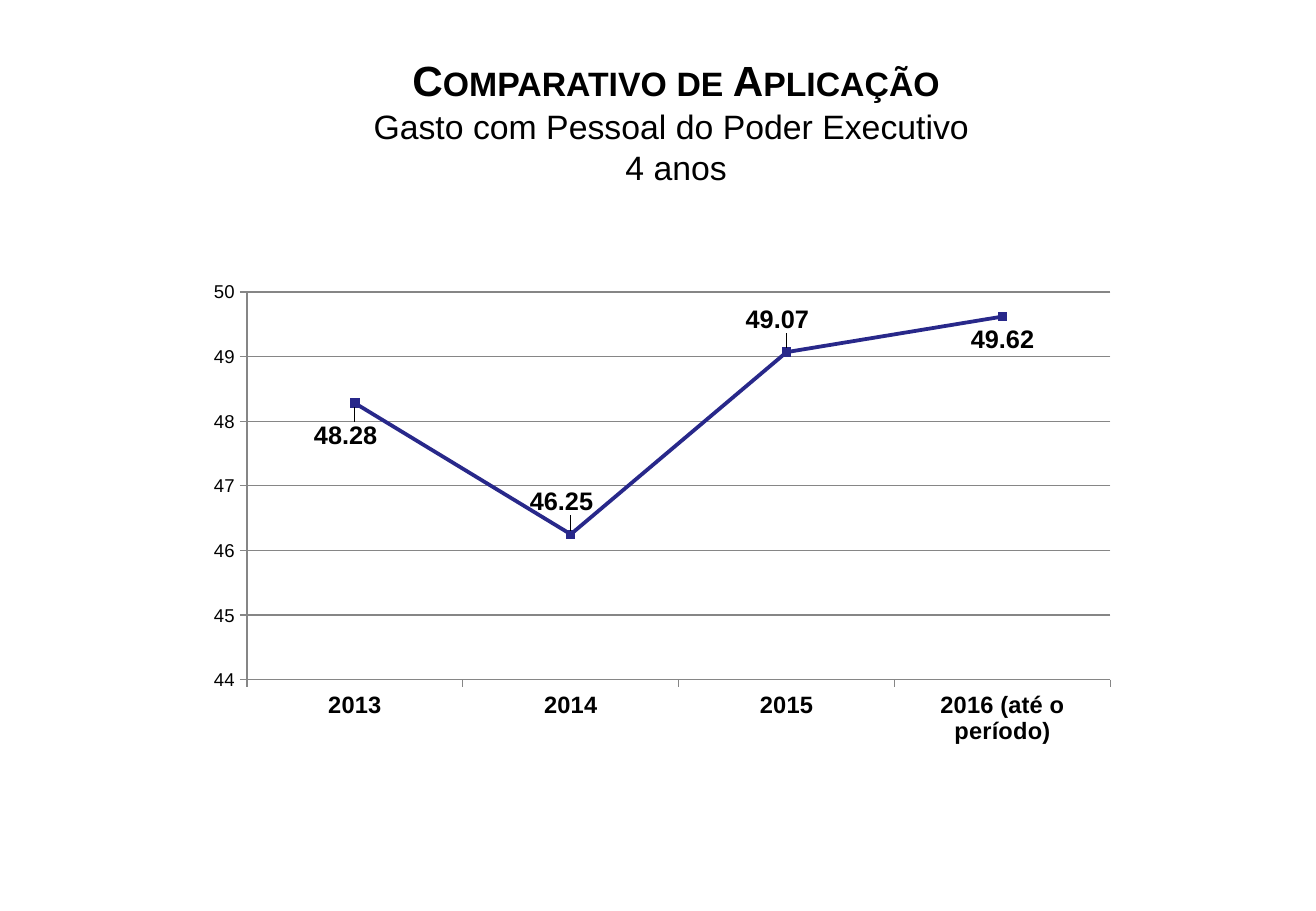
"""Build a slide with a line chart of personnel spending over four years."""
from dataclasses import dataclass

from lxml import etree
from pptx import Presentation
from pptx.chart.data import CategoryChartData
from pptx.dml.color import RGBColor
from pptx.enum.chart import XL_CHART_TYPE, XL_LABEL_POSITION, XL_MARKER_STYLE, XL_TICK_MARK
from pptx.enum.text import MSO_ANCHOR, PP_ALIGN
from pptx.oxml.ns import qn
from pptx.util import Inches, Pt

LINE_MARKERS = XL_CHART_TYPE.LINE_MARKERS
ABOVE = XL_LABEL_POSITION.ABOVE
BELOW = XL_LABEL_POSITION.BELOW
SQUARE = XL_MARKER_STYLE.SQUARE
OUTSIDE = XL_TICK_MARK.OUTSIDE
MIDDLE = MSO_ANCHOR.MIDDLE
CENTER = PP_ALIGN.CENTER
FONT = "Arial"
COLORS = {"text": "000000", "line": "28288A", "grid": "868686"}


@dataclass
class Year:
    name: str
    value: float
    position: XL_LABEL_POSITION
    shift_x: float
    shift_y: float


YEARS = [
    Year("2013", 48.28, BELOW, -0.01, 0.02),
    Year("2014", 46.25, ABOVE, -0.01, -0.02),
    Year("2015", 49.07, ABOVE, -0.01, -0.02),
    Year("2016 (até o período)", 49.62, BELOW, 0, 0),
]


def color(name: str) -> RGBColor:
    return RGBColor.from_string(COLORS[name])


def style_font(font, size: float, bold: bool = False) -> None:
    font.name = FONT
    font.size = Pt(size)
    font.bold = bold
    font.color.rgb = color("text")


def add_title_line(para, text: str, *, size: float, bold: bool = False,
                   small_caps: bool = False) -> None:
    para.alignment = CENTER
    para.line_spacing = Pt(24.3)
    span = para.add_run()
    span.text = text
    style_font(span.font, size, bold)
    if small_caps:
        span.font._element.set("cap", "small")


def add_title(page) -> None:
    box = page.shapes.add_textbox(Inches(2.66), Inches(0.41), Inches(5.81), Inches(1.25))
    frame = box.text_frame
    frame.word_wrap = True
    frame.vertical_anchor = MIDDLE
    add_title_line(frame.paragraphs[0], "Comparativo de Aplicação",
                   size=25, bold=True, small_caps=True)
    for text in ("Gasto com Pessoal do Poder Executivo ", "4 anos"):
        add_title_line(frame.add_paragraph(), text, size=20)


def add_layout(parent, index: int, **settings) -> None:
    for old in parent.findall(qn("c:layout")):
        parent.remove(old)
    layout = etree.Element(qn("c:layout"))
    manual = etree.SubElement(layout, qn("c:manualLayout"))
    for tag, value in settings.items():
        etree.SubElement(manual, qn(f"c:{tag}")).set("val", str(value))
    parent.insert(index, layout)


def style_axis(axis, size: float, bold: bool = False) -> None:
    axis.major_tick_mark = OUTSIDE
    axis.format.line.color.rgb = color("grid")
    axis.format.line.width = Pt(0.75)
    style_font(axis.tick_labels.font, size, bold)


def style_series(series) -> None:
    series.smooth = False
    series.format.line.color.rgb = color("line")
    series.format.line.width = Pt(2.25)
    marker = series.marker
    marker.style = SQUARE
    marker.size = 5
    marker.format.fill.solid()
    marker.format.fill.fore_color.rgb = color("line")
    marker.format.line.color.rgb = color("line")
    for index, year in enumerate(YEARS):
        label = series.points[index].data_label
        style_font(label.font, 15, True)
        label.position = year.position
    for element, year in zip(series._element.iter(qn("c:dLbl")), YEARS):
        add_layout(element, 1, x=year.shift_x, y=year.shift_y)


def add_spending_chart(page) -> None:
    data = CategoryChartData(number_format="General")
    data.categories = [year.name for year in YEARS]
    data.add_series("Series 1", [year.value for year in YEARS])
    chart = page.shapes.add_chart(LINE_MARKERS, Inches(1.61), Inches(2.23),
                                  Inches(7.69), Inches(3.98), data).chart
    style_font(chart.font, 18)
    chart.has_title = False
    chart.has_legend = False
    style_axis(chart.category_axis, 14, True)
    values = chart.value_axis
    style_axis(values, 11)
    values.minimum_scale, values.maximum_scale, values.major_unit = 44, 50, 1
    values.has_major_gridlines = True
    values.major_gridlines.format.line.color.rgb = color("grid")
    values.major_gridlines.format.line.width = Pt(0.75)
    plot = chart.plots[0]
    plot.vary_by_categories = False
    style_series(plot.series[0])
    add_layout(chart._chartSpace.find(".//" + qn("c:plotArea")), 0,
               layoutTarget="inner", xMode="edge", yMode="edge",
               x=0.055, y=0.044, w=0.924, h=0.802)


def main() -> None:
    deck = Presentation()
    deck.slide_width = Inches(10.83)
    deck.slide_height = Inches(7.5)
    page = deck.slides.add_slide(deck.slide_layouts[6])
    add_title(page)
    add_spending_chart(page)
    deck.save("out.pptx")


if __name__ == "__main__":
    main()
